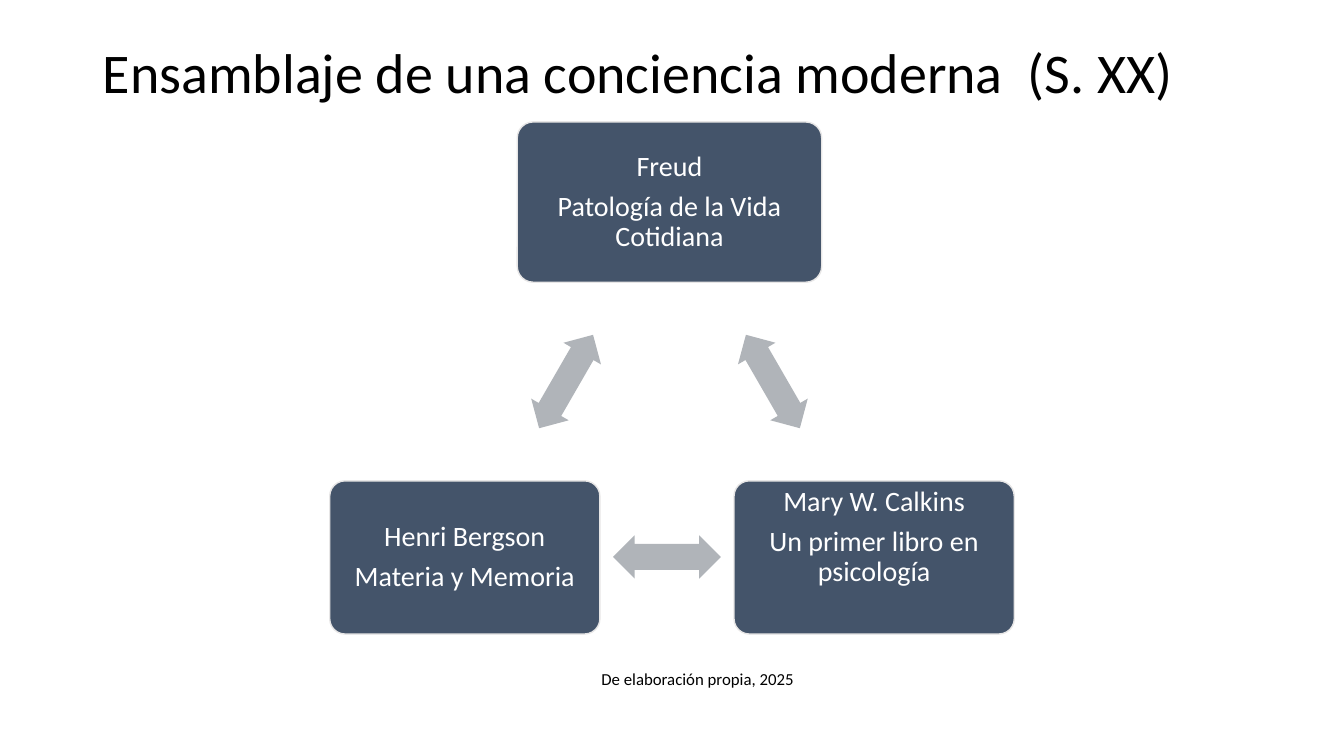
from dataclasses import dataclass

from pptx import Presentation
from pptx.dml.color import RGBColor
from pptx.enum.shapes import MSO_SHAPE as Shape
from pptx.enum.text import MSO_ANCHOR as Anchor, MSO_AUTO_SIZE as AutoSize, PP_ALIGN as Align
from pptx.slide import Slide
from pptx.text.text import TextFrame
from pptx.util import Inches, Pt

COLORS = {"card": "44546A", "edge": "E7E6E6", "arrow": "B0B4B9",
          "light": "FFFFFF", "dark": "000000"}
FONT = "Calibri"
INSET = 0.08
ARROW_SIZE = (1.07, 0.43)


@dataclass
class Author:
    name: str
    work: str
    box: tuple[float, float, float, float]
    bottom_inset: float = INSET


@dataclass
class Exchange:
    left: float
    top: float
    rotation: float


AUTHORS = [
    Author("Freud", "Patología de la Vida Cotidiana", (5.13, 1.21, 3.02, 1.59)),
    Author("Mary W. Calkins", "Un primer libro en psicología", (7.28, 4.77, 2.78, 1.52), 0.48),
    Author("Henri Bergson", "Materia y Memoria", (3.27, 4.77, 2.68, 1.52)),
]
EXCHANGES = [Exchange(7.13, 3.57, 60), Exchange(6.08, 5.31, 180), Exchange(5.08, 3.57, 300)]


def color(key: str) -> RGBColor:
    return RGBColor.from_string(COLORS[key])


def write(frame: TextFrame, lines: list[str], size: float, ink: str, align: Align,
          spacing: float = 1.0, after: float = 0) -> None:
    frame.word_wrap = True
    for index, line in enumerate(lines):
        paragraph = frame.add_paragraph() if index else frame.paragraphs[0]
        paragraph.alignment = align
        paragraph.line_spacing = spacing
        paragraph.space_after = Pt(after)
        run = paragraph.add_run()
        run.text = line
        run.font.name = FONT
        run.font.size = Pt(size)
        run.font.color.rgb = color(ink)


def add_author(slide: Slide, author: Author) -> None:
    card = slide.shapes.add_shape(Shape.ROUNDED_RECTANGLE, *map(Inches, author.box))
    card.adjustments[0] = 0.1
    card.shadow.inherit = False
    card.fill.solid()
    card.fill.fore_color.rgb = color("card")
    card.line.color.rgb = color("edge")
    card.line.width = Pt(1)
    frame = card.text_frame
    frame.vertical_anchor = Anchor.MIDDLE
    frame.margin_left = frame.margin_right = frame.margin_top = Inches(INSET)
    frame.margin_bottom = Inches(author.bottom_inset)
    write(frame, [author.name, author.work], 20, "light", Align.CENTER, 0.9, 7)


def add_exchange(slide: Slide, exchange: Exchange) -> None:
    arrow = slide.shapes.add_shape(Shape.LEFT_RIGHT_ARROW, Inches(exchange.left),
                                   Inches(exchange.top), *map(Inches, ARROW_SIZE))
    arrow.adjustments[0], arrow.adjustments[1] = 0.6, 0.5
    arrow.rotation = exchange.rotation
    arrow.shadow.inherit = False
    arrow.fill.solid()
    arrow.fill.fore_color.rgb = color("arrow")
    arrow.line.fill.background()


def main() -> None:
    deck = Presentation()
    deck.slide_width, deck.slide_height = Inches(13.33), Inches(7.5)
    slide = deck.slides.add_slide(deck.slide_layouts[5])

    # Title
    title = slide.shapes.title
    title.left, title.top, title.width, title.height = map(Inches, (0.92, 0.26, 11.5, 0.97))
    title.text_frame.auto_size = AutoSize.NONE
    title.text_frame.vertical_anchor = Anchor.MIDDLE
    write(title.text_frame, ["Ensamblaje de una conciencia moderna  (S. XX)"],
          40, "dark", Align.LEFT, 0.9)

    # Cycle of authors and the exchanges between them
    for author in AUTHORS:
        add_author(slide, author)
    for exchange in EXCHANGES:
        add_exchange(slide, exchange)

    # Credit line
    credit = slide.shapes.add_textbox(*map(Inches, (5.01, 6.59, 3.82, 0.3)))
    credit.text_frame.auto_size = AutoSize.SHAPE_TO_FIT_TEXT
    write(credit.text_frame, ["De elaboración propia, 2025"], 12, "dark", Align.CENTER)

    deck.save("out.pptx")


if __name__ == "__main__":
    main()
